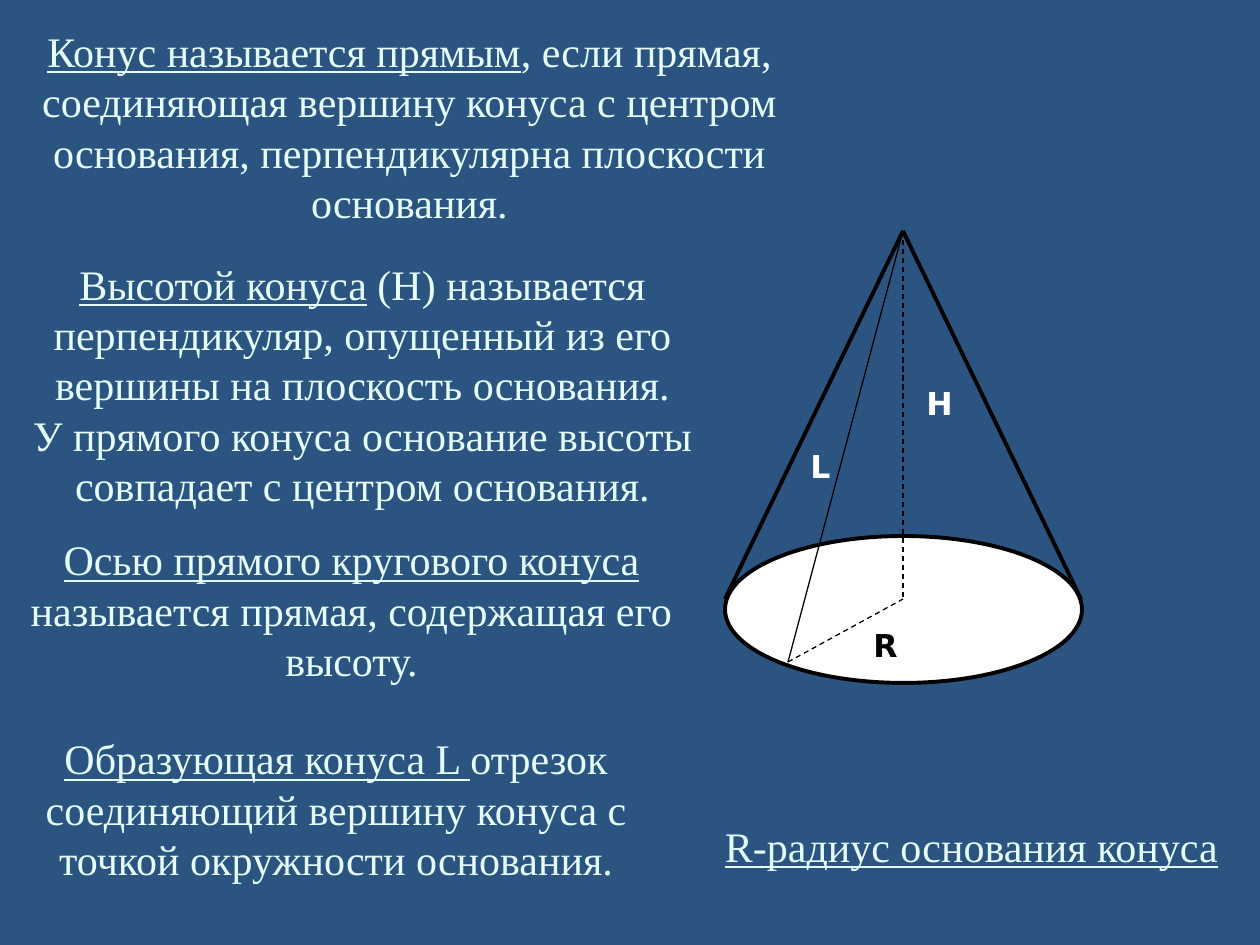
from lxml.etree import SubElement
from pptx import Presentation
from pptx.dml.color import RGBColor
from pptx.enum.dml import MSO_LINE
from pptx.enum.shapes import MSO_CONNECTOR, MSO_SHAPE
from pptx.enum.text import MSO_ANCHOR, MSO_AUTO_SIZE, PP_ALIGN
from pptx.oxml.ns import qn
from pptx.util import Emu, Pt

BACKGROUND = RGBColor(0x2B, 0x54, 0x81)
PALE = RGBColor(0xE5, 0xFF, 0xFF)
WHITE = RGBColor(0xFF, 0xFF, 0xFF)
BLACK = RGBColor(0x00, 0x00, 0x00)
THICK, THIN = 2.25, 0.75

APEX, CENTER = (903, 231), (903, 599)
LEFT_EDGE, RIGHT_EDGE = (725, 599), (1081, 599)
RIM_POINT = (788, 662)

EDGES = [
    (APEX, LEFT_EDGE, THICK, None),
    (APEX, RIGHT_EDGE, THICK, None),
    (APEX, CENTER, THIN, MSO_LINE.DASH),
    (RIM_POINT, CENTER, THIN, MSO_LINE.DASH),
    (APEX, RIM_POINT, THIN, None),
]
LABELS = [
    ("R", (861, 620, 63, 50), BLACK),
    ("H", (914, 378, 53, 50), WHITE),
    ("L", (798, 441, 42, 50), WHITE),
]
DEFINITIONS = [
    ((0, 21, 819, 210), "Конус называется прямым",
     ", если прямая, соединяющая вершину конуса с центром основания, "
     "перпендикулярна плоскости основания."),
    ((0, 242, 725, 284), "Высотой конуса",
     " (H) называется перпендикуляр, опущенный из его вершины на плоскость основания.\n"
     "У прямого конуса основание высоты совпадает с центром основания."),
    ((683, 798, 577, 95), "R-радиус основания конуса", ""),
    ((0, 735, 672, 147), "Образующая конуса L ",
     "отрезок соединяющий вершину конуса с точкой окружности основания."),
    ((0, 536, 703, 147), "Осью прямого кругового конуса",
     " называется прямая, содержащая его высоту."),
]


def px(*lengths):
    """Turn pixel lengths into EMU."""
    return [Emu(round(length * 914400 / 126)) for length in lengths]


def set_font(font, name, size, color):
    """Set the typeface, size and colour of a font."""
    font.name = name
    font.size = Pt(size)
    font.color.rgb = color


def add_base(slide):
    """Draw the ellipse at the foot of the cone."""
    base = slide.shapes.add_shape(MSO_SHAPE.OVAL, *px(725, 536, 357, 147))
    base.shadow.inherit = False
    base.fill.solid()
    base.fill.fore_color.rgb = WHITE
    base.line.color.rgb = BLACK
    base.line.width = Pt(THICK)


def add_edge(slide, start, end, width, dash):
    """Draw one straight line of the cone."""
    edge = slide.shapes.add_connector(MSO_CONNECTOR.STRAIGHT, *px(*start, *end))
    SubElement(edge._element.spPr, qn("a:effectLst"))
    edge.line.color.rgb = BLACK
    edge.line.width = Pt(width)
    if dash:
        edge.line.dash_style = dash


def add_label(slide, text, bounds, color):
    """Add a letter that names a part of the cone."""
    frame = slide.shapes.add_textbox(*px(*bounds)).text_frame
    frame.word_wrap = True
    frame.auto_size = MSO_AUTO_SIZE.SHAPE_TO_FIT_TEXT
    para = frame.paragraphs[0]
    para.text = text
    set_font(para.font, "DejaVu Sans", 18, color)
    para.font.bold = True


def add_definition(slide, bounds, term, explanation):
    """Add a centred definition with its term underlined."""
    frame = slide.shapes.add_textbox(*px(*bounds)).text_frame
    frame.word_wrap = True
    frame.vertical_anchor = MSO_ANCHOR.MIDDLE
    para = frame.paragraphs[0]
    para.alignment = PP_ALIGN.CENTER
    set_font(para.font, "Times New Roman", 24, PALE)
    span = para.add_run()
    span.text = term
    span.font.underline = True
    for index, line in enumerate(explanation.splitlines()):
        if index:
            para.add_line_break()
        para.add_run().text = line


def main():
    """Build the slide about the parts of a cone."""
    deck = Presentation()
    deck.slide_width, deck.slide_height = px(1260, 945)
    slide = deck.slides.add_slide(deck.slide_layouts[6])
    slide.background.fill.solid()
    slide.background.fill.fore_color.rgb = BACKGROUND
    add_base(slide)
    for edge in EDGES:
        add_edge(slide, *edge)
    for label in LABELS:
        add_label(slide, *label)
    for definition in DEFINITIONS:
        add_definition(slide, *definition)
    deck.save("out.pptx")


if __name__ == "__main__":
    main()
